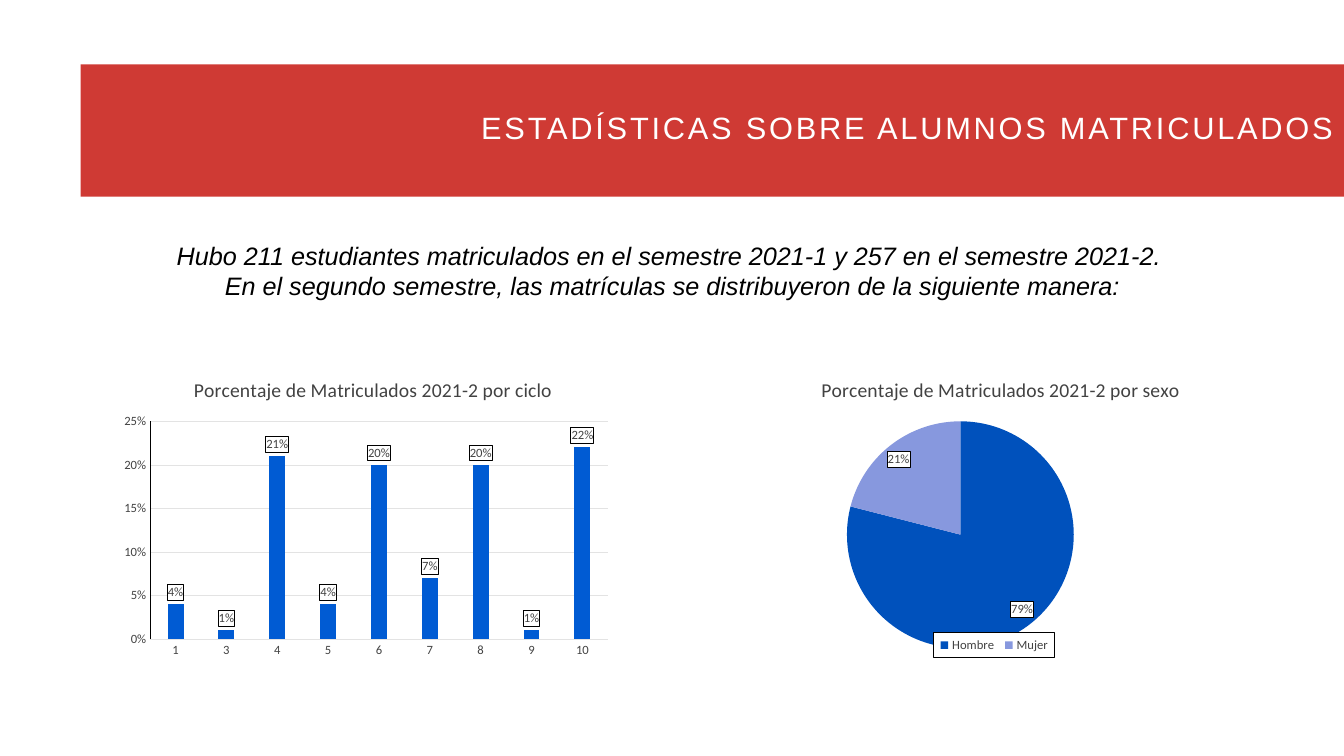
import pptx
import pptx.chart.data
import pptx.dml.color
import pptx.enum.chart
import pptx.enum.text
import pptx.oxml
import pptx.oxml.ns
import pptx.util
from dataclasses import dataclass

ALIGN = pptx.enum.text.PP_ALIGN
CHART = pptx.enum.chart.XL_CHART_TYPE
LABEL = pptx.enum.chart.XL_LABEL_POSITION
TICK = pptx.enum.chart.XL_TICK_MARK


@dataclass(frozen=True)
class Theme:
    banner: str = "CF3A34"
    paper: str = "FFFFFF"
    ink: str = "000000"
    muted: str = "424242"
    grid: str = "E3E3E3"
    bar: str = "005BD3"
    men: str = "0051BC"
    women: str = "8798DE"
    text_font: str = "Arial"
    chart_font: str = "Calibri"
    heading: int = 22
    intro: int = 18
    chart_title: int = 14
    chart_base: int = 12
    chart_small: int = 9
    hairline: float = 0.25


def rgb(color):
    return pptx.dml.color.RGBColor.from_string(color)


def set_font(font, size, color, face, italic=None):
    font.size = pptx.util.Pt(size)
    font.color.rgb = rgb(color)
    font.name = face
    font.italic = italic
    font.bold = False


def write(frame, text, *, size, color, face, align=ALIGN.CENTER,
          italic=None, tracking=None, leading=None):
    for index, sentence in enumerate(text.split("\n")):
        paragraph = frame.add_paragraph() if index else frame.paragraphs[0]
        paragraph.alignment = align
        paragraph.line_spacing = leading
        run = paragraph.add_run()
        run.text = sentence
        set_font(run.font, size, color, face, italic)
        if tracking:
            run.font._element.set("spc", str(tracking * 100))


def chart_xml(body):
    return pptx.oxml.parse_xml(body.replace(
        ">", " " + pptx.oxml.ns.nsdecls("c", "a") + ">", 1))


def place(element, index, **shares):
    for default in element.findall(pptx.oxml.ns.qn("c:layout")):
        element.remove(default)
    modes = '<c:xMode val="edge"/><c:yMode val="edge"/>'
    target = '<c:layoutTarget val="inner"/>' if index == 0 else ""
    values = "".join(f'<c:{key} val="{share}"/>' for key, share in shares.items())
    element.insert(index, chart_xml(
        f"<c:layout><c:manualLayout>{target}{modes}{values}</c:manualLayout></c:layout>"))


def frame_box(element, fill, outline=None):
    line = f'<a:solidFill><a:srgbClr val="{outline}"/></a:solidFill>' if outline else "<a:noFill/>"
    element.find(pptx.oxml.ns.qn("c:txPr")).addprevious(chart_xml(
        f'<c:spPr><a:solidFill><a:srgbClr val="{fill}"/></a:solidFill>'
        f'<a:ln w="9525">{line}</a:ln></c:spPr>'))


class EnrollmentSlide:
    def __init__(self, deck, theme):
        self.deck = deck
        self.theme = theme
        self.slide = deck.slides.add_slide(deck.slide_layouts[5])

    def area(self, left, top, width, height):
        column = self.deck.slide_width / 100
        row = self.deck.slide_height / 100
        return (round(left * column), round(top * row),
                round(width * column), round(height * row))

    def banner(self, text, *cells):
        heading = self.slide.shapes.title
        heading.left, heading.top, heading.width, heading.height = self.area(*cells)
        heading.fill.solid()
        heading.fill.fore_color.rgb = rgb(self.theme.banner)
        frame = heading.text_frame
        frame.auto_size = pptx.enum.text.MSO_AUTO_SIZE.NONE
        frame.vertical_anchor = pptx.enum.text.MSO_ANCHOR.MIDDLE
        write(frame, text, size=self.theme.heading, color=self.theme.paper,
              face=self.theme.text_font, align=ALIGN.RIGHT, tracking=2, leading=0.8)

    def intro(self, text, *cells):
        frame = self.slide.shapes.add_textbox(*self.area(*cells)).text_frame
        frame.word_wrap = True
        frame.auto_size = pptx.enum.text.MSO_AUTO_SIZE.SHAPE_TO_FIT_TEXT
        write(frame, text, size=self.theme.intro, color=self.theme.ink,
              face=self.theme.text_font, italic=True)

    def small(self, font):
        set_font(font, self.theme.chart_small, self.theme.muted, self.theme.chart_font)

    def chart(self, kind, title, shares, cells, title_left, plot_area, label_position):
        data = pptx.chart.data.CategoryChartData(number_format="0%")
        data.categories = list(shares)
        data.add_series("Series 1", list(shares.values()))
        chart = self.slide.shapes.add_chart(kind, *self.area(*cells), data).chart
        set_font(chart.font, self.theme.chart_base, self.theme.ink, self.theme.text_font)
        frame_box(chart._chartSpace, self.theme.paper)
        chart.has_legend = False
        write(chart.chart_title.text_frame, title, size=self.theme.chart_title,
              color=self.theme.muted, face=self.theme.chart_font)
        place(chart.chart_title._element, 1, x=title_left, y=0.04)
        place(chart._chartSpace.chart.plotArea, 0, **plot_area)
        plot = chart.plots[0]
        plot.has_data_labels = True
        labels = plot.data_labels
        labels.show_value = True
        labels.show_percentage = False
        labels.number_format = "0%"
        labels.number_format_is_linked = False
        labels.position = label_position
        self.small(labels.font)
        frame_box(labels._element, self.theme.paper, self.theme.ink)
        return chart

    def line(self, target, color):
        target.format.line.color.rgb = rgb(color)
        target.format.line.width = pptx.util.Pt(self.theme.hairline)

    def columns(self, title, shares, *cells):
        chart = self.chart(CHART.COLUMN_CLUSTERED, title, shares, cells, 0.15,
                           dict(x=0.07, y=0.2, w=0.91, h=0.72), LABEL.OUTSIDE_END)
        plot = chart.plots[0]
        plot.vary_by_categories = False
        plot.gap_width = 219
        plot.overlap = -27
        plot.series[0].format.fill.solid()
        plot.series[0].format.fill.fore_color.rgb = rgb(self.theme.bar)
        for axis, color in ((chart.category_axis, self.theme.grid),
                            (chart.value_axis, self.theme.ink)):
            axis.major_tick_mark = axis.minor_tick_mark = TICK.NONE
            self.small(axis.tick_labels.font)
            self.line(axis, color)
        percent = chart.value_axis
        percent.minimum_scale = 0
        percent.maximum_scale = 0.25
        percent.major_unit = 0.05
        percent.tick_labels.number_format = "0%"
        percent.tick_labels.number_format_is_linked = False
        self.line(percent.major_gridlines, self.theme.grid)

    def pie(self, title, shares, *cells):
        chart = self.chart(CHART.PIE, title, shares, cells, 0.13,
                           dict(x=0.19, y=0.2, w=0.47, h=0.75), LABEL.BEST_FIT)
        chart.plots[0].vary_by_categories = True
        for index, color in enumerate((self.theme.men, self.theme.women)):
            fill = chart.plots[0].series[0].points[index].format.fill
            fill.solid()
            fill.fore_color.rgb = rgb(color)
        chart.has_legend = True
        legend = chart.legend
        legend.position = pptx.enum.chart.XL_LEGEND_POSITION.RIGHT
        legend.include_in_layout = False
        self.small(legend.font)
        place(legend._element, 1, x=0.37, y=0.9, w=0.25, h=0.08)
        frame_box(legend._element, self.theme.paper, self.theme.ink)


def main():
    deck = pptx.Presentation()
    deck.slide_width = pptx.util.Inches(13.33)
    deck.slide_height = pptx.util.Inches(7.5)
    enrollment = EnrollmentSlide(deck, Theme())
    enrollment.banner("ESTADÍSTICAS SOBRE ALUMNOS MATRICULADOS", 6, 8.53, 94, 17.47)
    enrollment.intro(
        "Hubo 211 estudiantes matriculados en el semestre 2021-1 y 257 en el semestre 2021-2. \n"
        "En el segundo semestre, las matrículas se distribuyeron de la siguiente manera:",
        8.55, 31.07, 82.97, 9.47)
    enrollment.columns(
        "Porcentaje de Matriculados 2021-2 por ciclo",
        {"1": 0.04, "3": 0.01, "4": 0.21, "5": 0.04, "6": 0.2,
         "7": 0.07, "8": 0.2, "9": 0.01, "10": 0.22},
        8.55, 47.73, 37.43, 40)
    enrollment.pie("Porcentaje de Matriculados 2021-2 por sexo",
                   {"Hombre": 0.79, "Mujer": 0.21}, 56.19, 47.73, 35.93, 40)
    deck.save("out.pptx")


if __name__ == "__main__":
    main()
